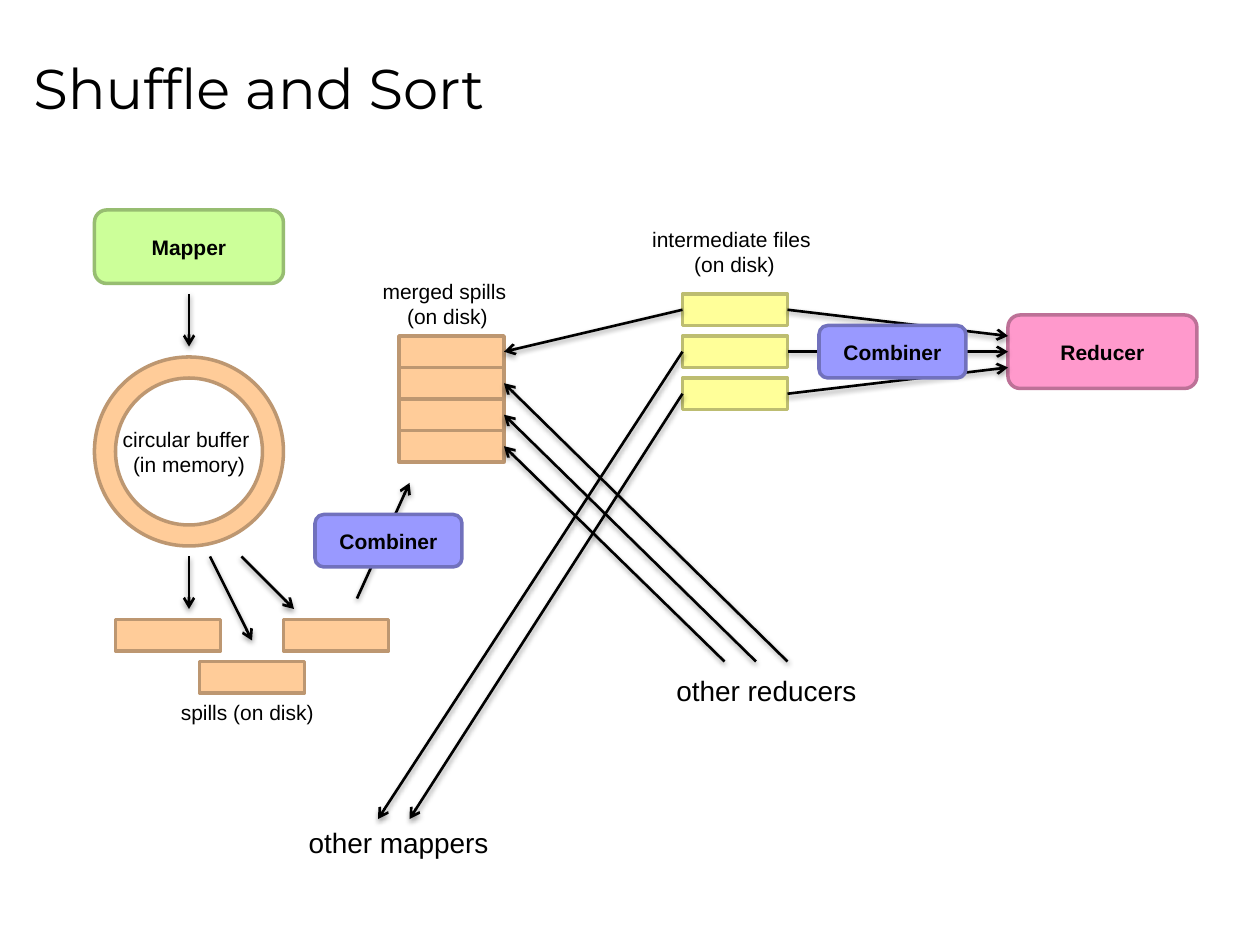
from lxml.etree import SubElement
from pptx import Presentation
from pptx.dml.color import RGBColor
from pptx.enum.shapes import MSO_CONNECTOR as Link, MSO_SHAPE as Kind
from pptx.enum.text import MSO_ANCHOR as Anchor, MSO_AUTO_SIZE as Fit, PP_ALIGN as Align
from pptx.oxml.ns import qn
from pptx.util import Pt


def color(hex_text):
    return RGBColor.from_string(hex_text)


class Diagram:
    font, ink = "Arial", "000000"
    orange = ("FFCC99", "BD9771")
    yellow = ("FFFF99", "BDBD71")
    green = ("CCFF99", "97BD71")
    pink = ("FF99CC", "BD7197")
    blue = ("9999FF", "7171BD")
    small, large = 12, 16
    border, stroke = 2, 1.5

    def __init__(self, page):
        self.page = page

    def add_text(self, frame, text, size, bold=False, font=None, align=Align.CENTER):
        para = frame.paragraphs[0]
        para.alignment = align
        for number, line in enumerate(text.split("\n")):
            if number:
                para.add_line_break()
            span = para.add_run()
            span.text = line
            span.font.name = font or self.font
            span.font.size = Pt(size)
            span.font.bold = bold
            span.font.color.rgb = color(self.ink)

    def shape(self, kind, x, y, width, height, colors, text=""):
        box = self.page.shapes.add_shape(kind, Pt(x), Pt(y), Pt(width), Pt(height))
        box.shadow.inherit = False
        fill, line = colors
        box.fill.solid()
        box.fill.fore_color.rgb = color(fill)
        box.line.color.rgb = color(line)
        box.line.width = Pt(self.border)
        if text:
            box.text_frame.vertical_anchor = Anchor.MIDDLE
            self.add_text(box.text_frame, text, self.small, bold=True)

    def block(self, x, y, colors):
        self.shape(Kind.RECTANGLE, x, y, 60, 18, colors)

    def label(self, x, y, width, height, text, size, wrap=False, align=Align.CENTER):
        box = self.page.shapes.add_textbox(Pt(x), Pt(y), Pt(width), Pt(height))
        box.text_frame.word_wrap = wrap
        box.text_frame.auto_size = Fit.SHAPE_TO_FIT_TEXT
        self.add_text(box.text_frame, text, size, align=align)

    def title(self, x, y, width, height, text):
        box = self.page.shapes.add_textbox(Pt(x), Pt(y), Pt(width), Pt(height))
        box.text_frame.word_wrap = True
        box.text_frame.vertical_anchor = Anchor.MIDDLE
        self.add_text(box.text_frame, text, 32, font="Montserrat", align=Align.LEFT)

    def arrow(self, x1, y1, x2, y2):
        link = self.page.shapes.add_connector(Link.STRAIGHT, Pt(x1), Pt(y1), Pt(x2), Pt(y2))
        link.line.color.rgb = color(self.ink)
        link.line.width = Pt(self.stroke)
        props = link._element.spPr
        SubElement(props.find(qn("a:ln")), qn("a:tailEnd"), type="arrow")
        # Soft shadow straight below the line
        effects = SubElement(props, qn("a:effectLst"))
        shadow = SubElement(effects, qn("a:outerShdw"), blurRad=str(Pt(3.1)),
                            dist=str(Pt(1.6)), dir="5400000", rotWithShape="0")
        tint = SubElement(shadow, qn("a:srgbClr"), val=self.ink)
        SubElement(tint, qn("a:alpha"), val="38000")


def main():
    deck = Presentation()
    deck.slide_width, deck.slide_height = Pt(720), Pt(540)
    art = Diagram(deck.slides.add_slide(deck.slide_layouts[6]))
    art.title(12, 9, 684, 81, "Shuffle and Sort")

    # Mapper, reducer and the circular buffer
    art.shape(Kind.ROUNDED_RECTANGLE, 54, 120, 108, 42, art.green, "Mapper")
    art.shape(Kind.ROUNDED_RECTANGLE, 576, 180, 108, 42, art.pink, "Reducer")
    art.shape(Kind.OVAL, 54, 204, 108, 108, art.orange)
    art.shape(Kind.OVAL, 66, 216, 84, 84, ("FFFFFF", art.orange[1]))

    # Spills, merged spills and intermediate files
    for x, y in ((114, 378), (66, 354), (162, 354)):
        art.block(x, y, art.orange)
    for row in range(4):
        art.block(228, 192 + 18 * row, art.orange)
    for row in range(3):
        art.block(390, 168 + 24 * row, art.yellow)

    # Mapper side: buffer to spills to merged spills
    for ends in ((108, 168, 108, 198), (108, 318, 108, 348), (120, 318, 144, 366),
                 (138, 318, 168, 348), (204, 342, 234, 276)):
        art.arrow(*ends)

    # Intermediate files: back to the mappers and on to the reducer
    for row, (x, y) in enumerate(((288, 201), (216, 468), (234, 468))):
        middle = 177 + 24 * row
        art.arrow(390, middle, x, y)
        art.arrow(450, middle, 576, 192 + 9 * row)

    # Other reducers fetch from the merged spills
    for row in range(3):
        art.arrow(450 - 18 * row, 378, 288, 219 + 18 * row)

    # Labels
    art.label(169.2, 468, 118.8, 26.6, "other mappers", art.large, align=Align.LEFT)
    art.label(379.4, 381.6, 118.8, 26.6, "other reducers", art.large, align=Align.LEFT)
    art.label(60, 240, 96, 36, "circular buffer \n(in memory)", art.small, wrap=True)
    art.label(96, 396, 90.7, 21.8, "spills (on disk)", art.small)
    art.label(211, 155.6, 89.3, 36, "merged spills \n(on disk)", art.small)
    art.label(365, 126, 109.4, 36, "intermediate files \n(on disk)", art.small)

    # Combiners sit over the arrows
    for x, y in ((180, 294), (468, 186)):
        art.shape(Kind.ROUNDED_RECTANGLE, x, y, 84, 30, art.blue, "Combiner")

    deck.save("out.pptx")


if __name__ == "__main__":
    main()
